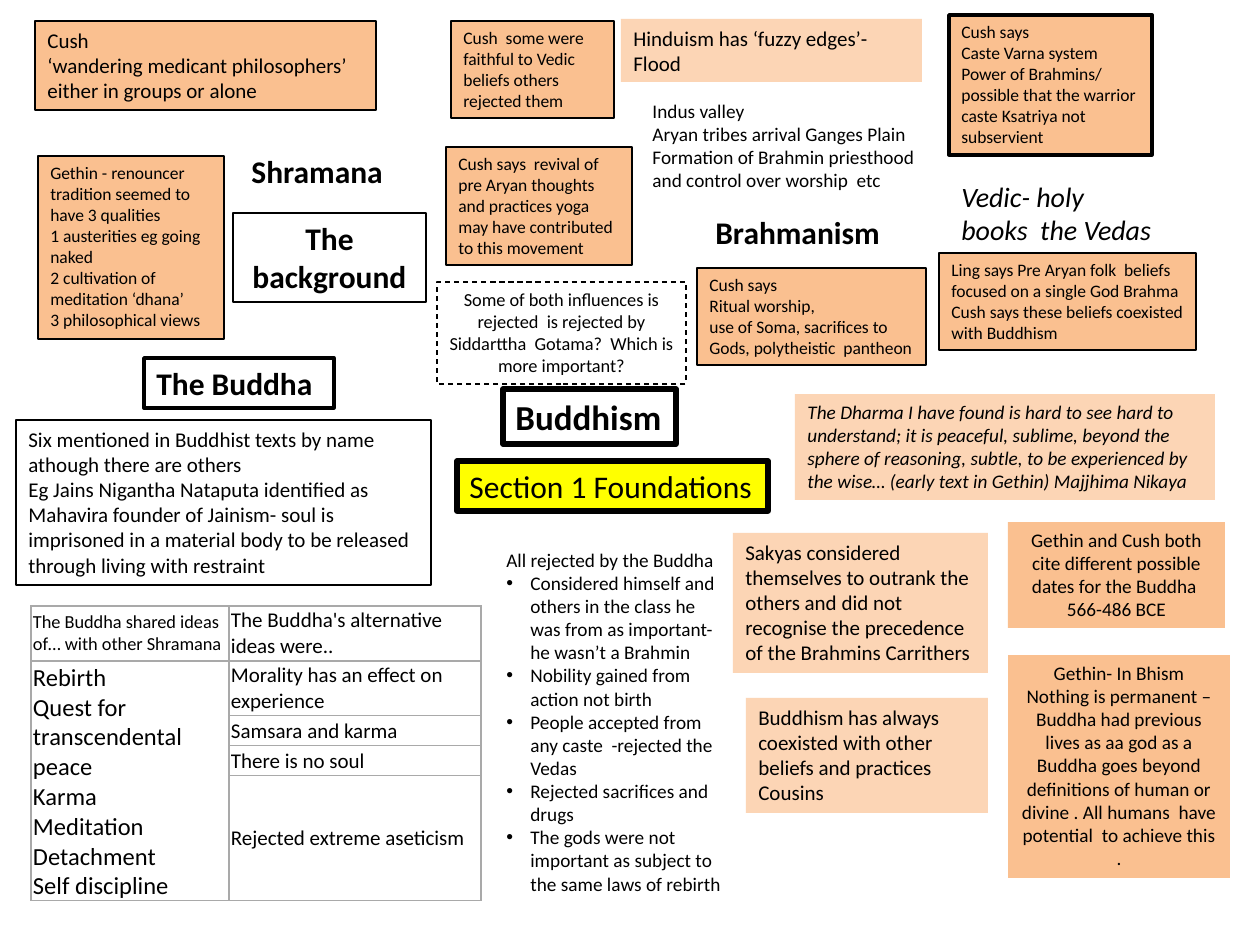
from dataclasses import dataclass
from typing import Optional

from pptx import Presentation
from pptx import util as u
from pptx.dml.color import RGBColor
from pptx.enum import dml, shapes, text
from pptx.oxml import parse_xml
from pptx.oxml.ns import nsdecls

SCALE = 914400 / 126  # EMU in one px


def px(n: int) -> u.Emu:
    return u.Emu(round(n * SCALE))


@dataclass(frozen=True)
class Theme:
    font: str = "Calibri"
    ink: str = "000000"
    white: str = "FFFFFF"
    amber: str = "FAC090"
    peach: str = "FCD5B5"
    yellow: str = "FFFF00"
    grid: str = "A9A9A9"
    small: float = 10
    note: float = 10.5
    body: float = 11
    large: float = 12
    list: float = 14
    quote: float = 16
    head: float = 18
    title: float = 20


T = Theme()


@dataclass(frozen=True)
class Box:
    at: tuple[int, int, int, int]
    words: str
    size: float = T.small
    fill: Optional[str] = None
    line: float = 0
    bold: bool = False
    ital: bool = False
    mid: bool = False
    dash: bool = False
    bullet: bool = False  # every paragraph after the first


@dataclass(frozen=True)
class Cell:
    row: int
    col: int
    words: str
    size: float = T.large


BOXES = [
    # Titles
    Box((503, 389, 173, 55), "Buddhism", T.title, line=3, bold=True),
    Box((457, 461, 311, 50), "Section 1 Foundations", T.head, T.yellow, 3),
    Box((144, 358, 190, 50), "The Buddha", T.head, T.white, 2, bold=True),
    Box((233, 213, 193, 89), "The background", T.head, line=0.75, bold=True, mid=True),
    Box((239, 146, 173, 50), "Shramana", T.head, bold=True),
    Box((703, 207, 192, 50), "Brahmanism", T.head, bold=True),
    # Plain notes
    Box((437, 282, 249, 102),
        "Some of both influences is rejected  is rejected by Siddarttha  Gotama?  "
        "Which is more important?", T.note, line=0.75, mid=True, dash=True),
    Box((640, 93, 299, 106),
        "Indus valley\nAryan tribes arrival Ganges Plain\n"
        "Formation of Brahmin priesthood and control over worship  etc", T.body),
    Box((949, 173, 215, 81), "Vedic- holy books  the Vedas", T.quote, ital=True),
    Box((16, 420, 415, 165),
        "Six mentioned in Buddhist texts by name athough there are others\n"
        "Eg Jains Nigantha Nataputa identified as Mahavira founder of Jainism- soul is "
        "imprisoned in a material body to be released through living with restraint",
        T.large, line=0.75),
    Box((494, 542, 241, 363),
        "All rejected by the Buddha\n"
        "Considered himself and others in the class he was from as important- "
        "he wasn’t a Brahmin\n"
        "Nobility gained from action not birth\n"
        "People accepted from any caste  -rejected the Vedas\n"
        "Rejected sacrifices and drugs\n"
        "The gods were not important as subject to the same laws of rebirth",
        T.body, bullet=True),
    # Amber scholar notes
    Box((949, 15, 203, 140),
        "Cush says\nCaste Varna system\n"
        "Power of Brahmins/ possible that the warrior caste Ksatriya not subservient",
        fill=T.amber, line=2),
    Box((697, 268, 229, 97),
        "Cush says\nRitual worship,\n"
        "use of Soma, sacrifices to Gods, polytheistic  pantheon",
        fill=T.amber, line=1),
    Box((939, 253, 257, 97),
        "Ling says Pre Aryan folk  beliefs focused on a single God Brahma\n"
        "Cush says these beliefs coexisted with Buddhism", fill=T.amber, line=0.75),
    Box((446, 147, 186, 118),
        "Cush says  revival of pre Aryan thoughts and practices yoga may have "
        "contributed to this movement", fill=T.amber, line=0.75),
    Box((35, 21, 341, 89),
        "Cush\n‘wandering medicant philosophers’ either in groups or alone",
        T.large, T.amber, 0.75),
    Box((451, 21, 163, 97),
        "Cush  some were faithful to Vedic beliefs others rejected them",
        fill=T.amber, line=0.75),
    Box((38, 156, 186, 183),
        "Gethin - renouncer tradition seemed to have 3 qualities\n"
        "1 austerities eg going naked\n2 cultivation of meditation ‘dhana’\n"
        "3 philosophical views", fill=T.amber, line=0.75),
    Box((1008, 522, 217, 106),
        "Gethin and Cush both cite different possible dates for the Buddha  566-486 BCE",
        T.body, T.amber, mid=True),
    Box((1008, 655, 222, 223),
        "Gethin- In Bhism Nothing is permanent – Buddha had previous lives as aa god as "
        "a Buddha goes beyond definitions of human or divine . All humans  have "
        "potential  to achieve this .", T.body, T.amber, mid=True),
    # Peach quotes
    Box((795, 394, 420, 106),
        "The Dharma I have found is hard to see hard to understand; it is peaceful, "
        "sublime, beyond the sphere of reasoning, subtle, to be experienced by the "
        "wise… (early text in Gethin) Majjhima Nikaya", T.body, T.peach, ital=True),
    Box((621, 19, 301, 63), "Hinduism has ‘fuzzy edges’- Flood", T.large, T.peach),
    Box((733, 533, 255, 140),
        "Sakyas considered themselves to outrank the others and did not recognise the "
        "precedence of the Brahmins Carrithers", T.large, T.peach),
    Box((746, 698, 242, 115),
        "Buddhism has always coexisted with other beliefs and practices Cousins",
        T.large, T.peach),
]

COLS = [198, 252]
ROWS = [55, 55, 30, 30, 125]
CELLS = [
    Cell(0, 0, "The Buddha shared ideas of… with other Shramana", T.note),
    Cell(0, 1, "The Buddha's alternative ideas were.."),
    Cell(1, 0, "Rebirth\nQuest for transcendental peace\nKarma\nMeditation\n"
               "Detachment\nSelf discipline", T.list),
    Cell(1, 1, "Morality has an effect on experience"),
    Cell(2, 1, "Samsara and karma"),
    Cell(3, 1, "There is no soul"),
    Cell(4, 1, "Rejected extreme aseticism"),
]


def style(frame, size: float, bold: bool = False, ital: bool = False) -> None:
    for par in frame.paragraphs:
        for run in par.runs:
            font = run.font
            font.name, font.size = T.font, u.Pt(size)
            font.bold, font.italic = bold, ital
            font.color.rgb = RGBColor.from_string(T.ink)


def add_dot(par) -> None:
    props = par._p.get_or_add_pPr()
    props.set("marL", str(px(24)))
    props.set("indent", str(-px(24)))
    props.append(parse_xml(f'<a:buFont {nsdecls("a")} typeface="Arial"/>'))
    props.append(parse_xml(f'<a:buChar {nsdecls("a")} char="•"/>'))


def draw_box(slide, box: Box) -> None:
    at = [px(n) for n in box.at]
    if box.fill or box.line:
        shape = slide.shapes.add_shape(shapes.MSO_SHAPE.RECTANGLE, *at)
        shape.shadow.inherit = False
    else:
        shape = slide.shapes.add_textbox(*at)
    if box.fill:
        shape.fill.solid()
        shape.fill.fore_color.rgb = RGBColor.from_string(box.fill)
    else:
        shape.fill.background()
    if box.line:
        shape.line.color.rgb = RGBColor.from_string(T.ink)
        shape.line.width = u.Pt(box.line)
        if box.dash:
            shape.line.dash_style = dml.MSO_LINE.DASH
    else:
        shape.line.fill.background()
    frame = shape.text_frame
    frame.word_wrap = True
    frame.vertical_anchor = text.MSO_ANCHOR.TOP
    frame.text = box.words
    for par in frame.paragraphs:
        par.alignment = text.PP_ALIGN.CENTER if box.mid else text.PP_ALIGN.LEFT
    if box.bullet:
        for par in frame.paragraphs[1:]:
            add_dot(par)
    style(frame, box.size, box.bold, box.ital)


def frame_cell(cell) -> None:
    for side in ("lnL", "lnR", "lnT", "lnB"):
        cell._tc.get_or_add_tcPr().append(parse_xml(
            f'<a:{side} {nsdecls("a")} w="{u.Pt(0.75)}"><a:solidFill>'
            f'<a:srgbClr val="{T.grid}"/></a:solidFill></a:{side}>'))
    cell.fill.solid()
    cell.fill.fore_color.rgb = RGBColor.from_string(T.white)
    cell.margin_left = cell.margin_right = px(2)
    cell.margin_top = cell.margin_bottom = px(2)
    cell.vertical_anchor = text.MSO_ANCHOR.MIDDLE


def draw_table(slide) -> None:
    table = slide.shapes.add_table(len(ROWS), len(COLS), px(31), px(606),
                                   px(sum(COLS)), px(sum(ROWS))).table
    table.first_row = table.horz_banding = False
    for col, wide in zip(table.columns, COLS):
        col.width = px(wide)
    for row, high in zip(table.rows, ROWS):
        row.height = px(high)
    for cell in table.iter_cells():
        frame_cell(cell)
    table.cell(1, 0).merge(table.cell(4, 0))
    for item in CELLS:
        frame = table.cell(item.row, item.col).text_frame
        frame.text = item.words
        style(frame, item.size)


def main() -> None:
    deck = Presentation()
    deck.slide_width, deck.slide_height = px(1260), px(945)
    slide = deck.slides.add_slide(deck.slide_layouts[6])
    for box in BOXES:
        draw_box(slide, box)
    draw_table(slide)
    deck.save("out.pptx")


if __name__ == "__main__":
    main()
